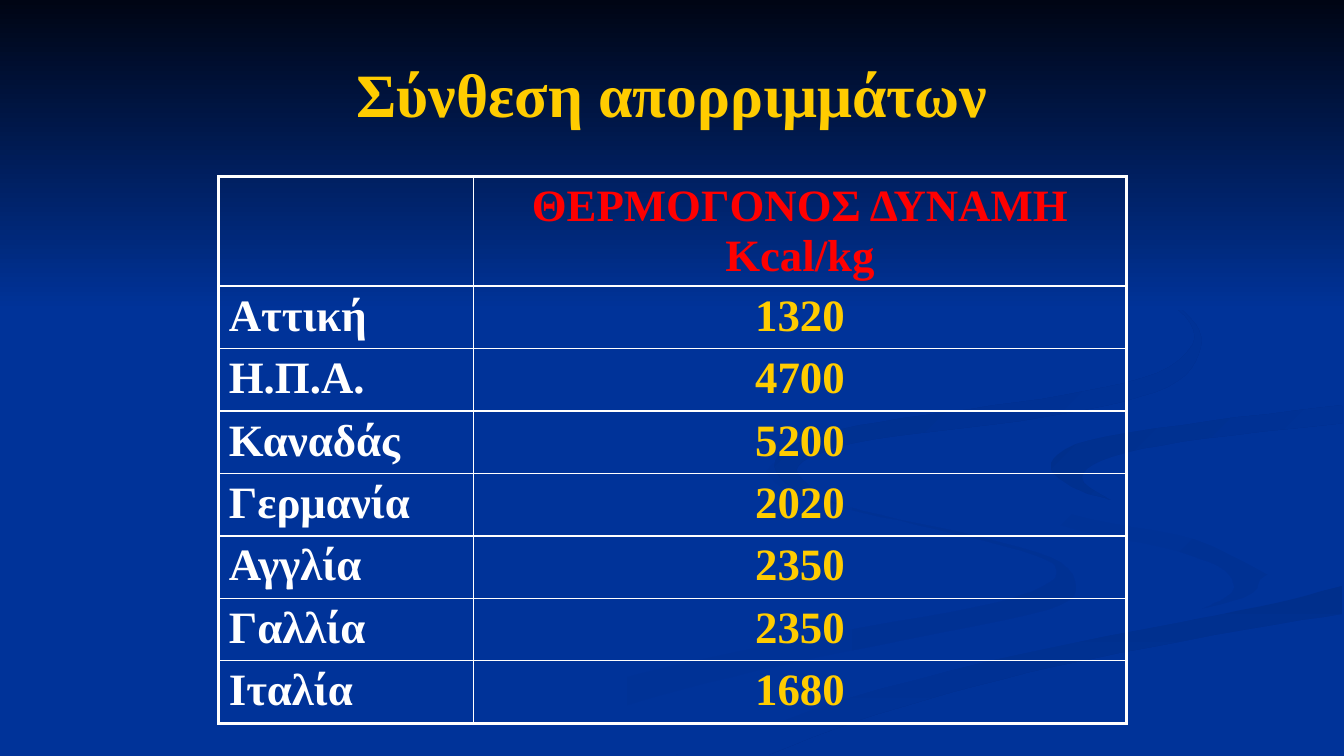
from dataclasses import dataclass
from lxml import etree
from pptx import Presentation, util as u
from pptx.dml.color import RGBColor
from pptx.enum import text
from pptx.oxml import ns

SLIDE_WIDTH, SLIDE_HEIGHT = 13.33, 7.5
FONT = "Times New Roman"
BLUE, GOLD, WHITE, RED = "003399", "FFCC00", "FFFFFF", "FF0000"
SHADE_BLUE, DIM_BLUE, NIGHT = "002F8C", "003193", "000514"
UNITS_PER_INCH = 100
CURVE_STEPS = 5
THIN_BORDER, THICK_BORDER = 1, 2.25

HEADER = ("", "ΘΕΡΜΟΓΟΝΟΣ ΔΥΝΑΜΗ Kcal/kg")
CALORIFIC_VALUES = {
    "Αττική": 1320,
    "Η.Π.Α.": 4700,
    "Καναδάς": 5200,
    "Γερμανία": 2020,
    "Αγγλία": 2350,
    "Γαλλία": 2350,
    "Ιταλία": 1680,
}
COLUMN_WIDTHS = (2.53, 6.47)
HEADER_HEIGHT, ROW_HEIGHT = 1.08, 0.62


@dataclass
class Ribbon:
    outward_edge: list
    return_edge: list
    start_color: str
    end_color: str
    angle: int


LEFT_RIBBON = Ribbon(
    [(7.67, 4.59), (7.83, 4.81), (8.56, 5.07), (9.53, 5.28), (10.42, 5.53), (10.67, 5.81),
     (10.39, 6.05), (9.01, 6.34), (7.52, 6.65), (6.21, 7), (4.82, 7.49)],
    [(4, 7.49), (5.02, 7.07), (6.65, 6.61), (8.22, 6.29), (9.69, 6.02), (10.32, 5.83),
     (10.48, 5.66), (10.27, 5.51), (9.29, 5.25), (8.41, 5.05), (7.82, 4.87), (7.6, 4.68)],
    BLUE, DIM_BLUE, 0)
INNER_CURL = Ribbon(
    [(9.65, 4.64), (9.93, 4.9), (10.56, 5.09), (11.34, 5.24), (12.06, 5.4), (12.47, 5.57),
     (12.57, 5.7), (12.43, 5.89), (11.91, 6.05)],
    [(11.91, 6.05), (12.15, 5.93), (12.24, 5.81), (12.09, 5.62), (11.57, 5.44),
     (10.87, 5.3), (10.22, 5.12), (9.85, 4.94), (9.65, 4.64)],
    BLUE, DIM_BLUE, 45)
LOWER_BAND = Ribbon(
    [(6.71, 7.49), (7.59, 7.19), (8.82, 6.81), (10.19, 6.47), (11.56, 6.2),
     (12.67, 5.98), (13.31, 5.81)],
    [(13.31, 6.09), (12.04, 6.3), (10.47, 6.61), (9.26, 6.92), (8.4, 7.19), (7.62, 7.49)],
    SHADE_BLUE, BLUE, 90)
RIGHT_RIBBON_TOP = Ribbon(
    [(13.32, 3.87), (12.27, 4.01), (11.06, 4.15), (10.07, 4.32), (9.66, 4.64),
     (9.93, 4.9), (10.82, 5.15), (11.85, 5.35), (12.57, 5.7)],
    [(13.32, 5.38), (12.3, 5.23), (11.31, 5.03), (10.58, 4.8), (10.42, 4.63),
     (10.81, 4.37), (11.99, 4.18), (13.32, 4.02)],
    BLUE, BLUE, 0)
RIGHT_RIBBON_TAIL = Ribbon(
    [(13.32, 5.38), (12.57, 5.7), (12.34, 5.93), (11.24, 6.18), (9.91, 6.43),
     (8.26, 6.84), (6.36, 7.49)],
    [(6.93, 7.47), (8.4, 6.93), (10.21, 6.47), (12.05, 6.1), (13.32, 5.81)],
    BLUE, BLUE, 0)
UPPER_BAND = Ribbon(
    [(13.31, 4.02), (11.98, 4.18), (10.8, 4.37), (10.42, 4.6), (10.63, 4.83), (11.01, 4.96)],
    [(11.01, 4.96), (10.73, 4.74), (11.03, 4.53), (11.95, 4.35), (13.31, 4.2)],
    SHADE_BLUE, BLUE, 45)
TOP_CURL = Ribbon(
    [(10.17, 2.33), (10.8, 2.56), (11.38, 2.83), (11.81, 3.16), (11.91, 3.44),
     (11.68, 3.78), (10.99, 4.02), (9.86, 4.21), (8.66, 4.36), (8.08, 4.52),
     (7.91, 4.7), (8.29, 5)],
    [(8.29, 5), (7.79, 4.79), (7.73, 4.51), (8.34, 4.26), (9.39, 4.09), (10.55, 3.92),
     (11.48, 3.7), (11.85, 3.35), (11.59, 2.99), (11.01, 2.66), (10.17, 2.33)],
    SHADE_BLUE, BLUE, 45)
TOP_SHADE = Ribbon(
    [(0, 0), (SLIDE_WIDTH, 0)], [(SLIDE_WIDTH, 3.08), (0, 3.08)], NIGHT, BLUE, 90)
BACKDROP = [LEFT_RIBBON, INNER_CURL, LOWER_BAND, RIGHT_RIBBON_TOP, RIGHT_RIBBON_TAIL,
            UPPER_BAND, TOP_CURL, TOP_SHADE]


def color(value):
    return RGBColor.from_string(value)


def spline(before, start, end, after, t):
    return (start + (end - before) * t / 2
            + (2 * before - 5 * start + 4 * end - after) * t ** 2 / 2
            + (3 * start - before - 3 * end + after) * t ** 3 / 2)


def smooth_edge(anchors):
    padded = [anchors[0], *anchors, anchors[-1]]
    points = []
    for neighbours in zip(padded, padded[1:], padded[2:], padded[3:]):
        xs, ys = zip(*neighbours)
        for step in range(CURVE_STEPS):
            t = step / CURVE_STEPS
            points.append((spline(*xs, t), spline(*ys, t)))
    return points + [anchors[-1]]


def add_ribbon(slide, ribbon):
    outline = smooth_edge(ribbon.outward_edge) + smooth_edge(ribbon.return_edge)
    points = [(x * UNITS_PER_INCH, y * UNITS_PER_INCH) for x, y in outline]
    builder = slide.shapes.build_freeform(*points[0], scale=u.Inches(1) / UNITS_PER_INCH)
    builder.add_line_segments(points[1:], close=True)
    shape = builder.convert_to_shape()
    shape.shadow.inherit = False
    shape.line.fill.background()
    if ribbon.start_color == ribbon.end_color:
        shape.fill.solid()
        shape.fill.fore_color.rgb = color(ribbon.start_color)
        return
    shape.fill.gradient()
    shape.fill.gradient_angle = -ribbon.angle % 360
    for stop, value in zip(shape.fill.gradient_stops, (ribbon.start_color, ribbon.end_color)):
        stop.color.rgb = color(value)


def add_run(paragraph, content, size, value):
    run = paragraph.add_run()
    run.text = content
    run.font.name = FONT
    run.font.size = u.Pt(size)
    run.font.bold = True
    run.font.color.rgb = color(value)


def set_title(slide, content):
    title = slide.shapes.title
    title.left, title.top = u.Inches(0.67), u.Inches(0.3)
    title.width, title.height = u.Inches(12), u.Inches(1.25)
    title.text_frame.vertical_anchor = text.MSO_ANCHOR.MIDDLE
    paragraph = title.text_frame.paragraphs[0]
    paragraph.alignment = text.PP_ALIGN.CENTER
    add_run(paragraph, content, 44, GOLD)
    slide.shapes._spTree.append(title._element)


def set_border(cell, side, points):
    properties = cell._tc.get_or_add_tcPr()
    line = etree.SubElement(properties, ns.qn(f"a:ln{side}"), w=str(u.Pt(points)))
    fill = etree.SubElement(line, ns.qn("a:solidFill"))
    etree.SubElement(fill, ns.qn("a:srgbClr"), val=WHITE)


def fill_cell(cell, content, value, alignment):
    cell.fill.background()
    paragraph = cell.text_frame.paragraphs[0]
    paragraph.alignment = alignment
    if content:
        add_run(paragraph, content, 32, value)


def add_calorific_table(slide):
    rows = [HEADER] + [(place, str(value)) for place, value in CALORIFIC_VALUES.items()]
    heights = [HEADER_HEIGHT] + [ROW_HEIGHT] * len(CALORIFIC_VALUES)
    frame = slide.shapes.add_table(len(rows), len(HEADER), u.Inches(2.17), u.Inches(1.75),
                                   u.Inches(sum(COLUMN_WIDTHS)), u.Inches(sum(heights)))
    table = frame.table
    table.first_row = table.horz_banding = False
    for column, width in zip(table.columns, COLUMN_WIDTHS):
        column.width = u.Inches(width)
    for i, (row, height) in enumerate(zip(rows, heights)):
        table.rows[i].height = u.Inches(height)
        value_color = RED if row is HEADER else GOLD
        styles = [(WHITE, text.PP_ALIGN.LEFT), (value_color, text.PP_ALIGN.CENTER)]
        for j, (content, style) in enumerate(zip(row, styles)):
            cell = table.cell(i, j)
            on_outside = {"L": j == 0, "R": j == len(row) - 1,
                          "T": i == 0, "B": i == len(rows) - 1}
            for side, outside in on_outside.items():
                set_border(cell, side, THICK_BORDER if outside else THIN_BORDER)
            fill_cell(cell, content, *style)


def main():
    presentation = Presentation()
    presentation.slide_width = u.Inches(SLIDE_WIDTH)
    presentation.slide_height = u.Inches(SLIDE_HEIGHT)
    slide = presentation.slides.add_slide(presentation.slide_layouts[5])
    slide.background.fill.solid()
    slide.background.fill.fore_color.rgb = color(BLUE)
    for ribbon in BACKDROP:
        add_ribbon(slide, ribbon)
    set_title(slide, "Σύνθεση απορριμμάτων")
    add_calorific_table(slide)
    presentation.save("out.pptx")


if __name__ == "__main__":
    main()
